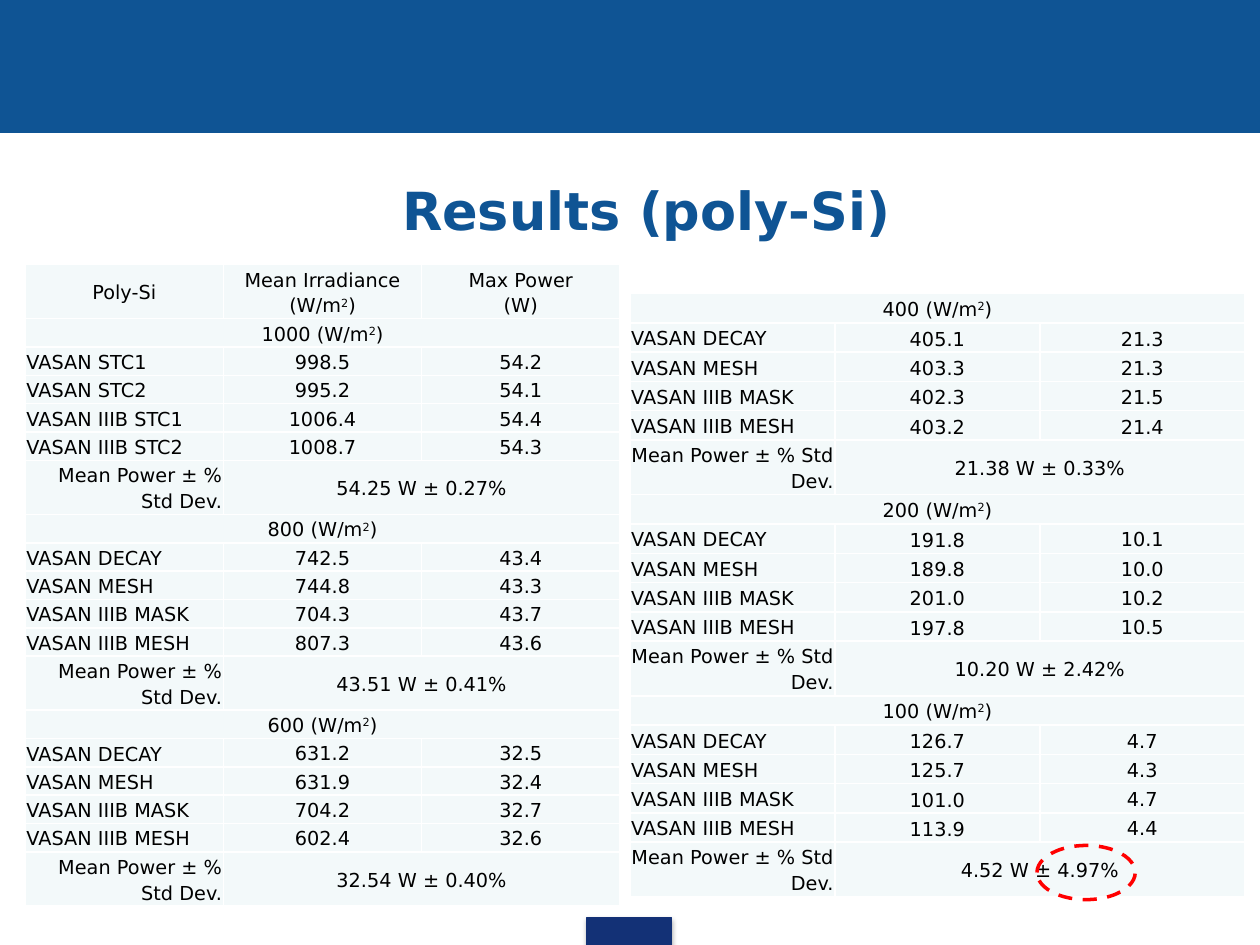
import pptx
import pptx.dml.color
import pptx.enum.dml
import pptx.enum.shapes
import pptx.enum.text
import pptx.oxml
import pptx.util

RGB = pptx.dml.color.RGBColor
BLUE = RGB(0x0F, 0x54, 0x94)
NAVY = RGB(0x13, 0x31, 0x76)
PALE = RGB(0xF3, 0xF9, 0xFA)
BLACK = RGB(0x00, 0x00, 0x00)
RED = RGB(0xFF, 0x00, 0x00)
FONT = "DejaVu Sans"
NS = 'xmlns:a="http://schemas.openxmlformats.org/drawingml/2006/main"'

Pt = pptx.util.Pt
Align = pptx.enum.text.PP_ALIGN
Anchor = pptx.enum.text.MSO_ANCHOR
Kind = pptx.enum.shapes.MSO_SHAPE
TOP, MID, LOW = Anchor.TOP, Anchor.MIDDLE, Anchor.BOTTOM

WIDTH = pptx.util.Inches(10)
HEIGHT = pptx.util.Inches(7.5)

BRAND = "VASAN"
SHORT = ["DECAY", "MESH", "IIIB MASK", "IIIB MESH"]
FIRST = ["STC1", "STC2", "IIIB STC1", "IIIB STC2"]
HEAD = ["Poly-Si", "Mean Irradiance\n(W/m^2^)", "Max Power\n(W)"]

LEFT = [
    (1000, FIRST, [998.5, 995.2, 1006.4, 1008.7],
     [54.2, 54.1, 54.4, 54.3], "54.25 W ± 0.27%", (MID, TOP)),
    (800, SHORT, [742.5, 744.8, 704.3, 807.3],
     [43.4, 43.3, 43.7, 43.6], "43.51 W ± 0.41%", (TOP, TOP)),
    (600, SHORT, [631.2, 631.9, 704.2, 602.4],
     [32.5, 32.4, 32.7, 32.6], "32.54 W ± 0.40%", (TOP, TOP)),
]
RIGHT = [
    (400, SHORT, [405.1, 403.3, 402.3, 403.2],
     [21.3, 21.3, 21.5, 21.4], "21.38 W ± 0.33%", (LOW, LOW)),
    (200, SHORT, [191.8, 189.8, 201.0, 197.8],
     [10.1, 10.0, 10.2, 10.5], "10.20 W ± 2.42%", (LOW, MID)),
    (100, SHORT, [126.7, 125.7, 101.0, 113.9],
     [4.7, 4.3, 4.7, 4.4], "4.52 W ± 4.97%", (LOW, MID)),
]


def area(left, top, width, height):
    return (int(WIDTH * left / 100), int(HEIGHT * top / 100),
            int(WIDTH * width / 100), int(HEIGHT * height / 100))


def write(frame, text, size=11, color=BLACK, bold=False,
          align=Align.CENTER, space=1.15):
    frame.word_wrap = True
    for row, line in enumerate(text.split("\n")):
        para = frame.add_paragraph() if row else frame.paragraphs[0]
        para.alignment = align
        para.line_spacing = space
        for part, piece in enumerate(line.split("^")):
            run = para.add_run()
            run.text = piece
            run.font.name = FONT
            run.font.size = Pt(size)
            run.font.bold = bold
            run.font.color.rgb = color
            if part % 2:
                run._r.get_or_add_rPr().set("baseline", "30000")


def block(slide, box, color):
    shape = slide.shapes.add_shape(Kind.RECTANGLE, *box)
    shape.shadow.inherit = False
    shape.fill.solid()
    shape.fill.fore_color.rgb = color
    shape.line.color.rgb = color
    shape.line.width = Pt(0.75)
    return shape


def frame(slide, band, tab):
    block(slide, band, BLUE)
    foot = block(slide, tab, NAVY)
    effects = foot._element.spPr.find(pptx.oxml.ns.qn("a:effectLst"))
    effects.append(pptx.oxml.parse_xml(
        f'<a:outerShdw {NS} blurRad="{Pt(3.1)}" dist="{Pt(1.8)}" dir="5400000">'
        '<a:srgbClr val="000000"><a:alpha val="35000"/></a:srgbClr>'
        '</a:outerShdw>'))


def title(slide, box):
    head = slide.shapes.title
    head.left, head.top, head.width, head.height = box
    text = head.text_frame
    text.auto_size = pptx.enum.text.MSO_AUTO_SIZE.NONE
    text.vertical_anchor = MID
    write(text, "Results (poly-Si)", size=30, color=BLUE, bold=True, space=1.0)
    props = text.paragraphs[0]._p.get_or_add_pPr()
    props.set("marL", str(int(WIDTH * 0.04)))
    props.set("indent", "0")


def paint(cell):
    props = cell._tc.get_or_add_tcPr()
    for side in ("lnL", "lnR", "lnT", "lnB"):
        props.append(pptx.oxml.parse_xml(
            f'<a:{side} {NS} w="{Pt(1)}"><a:solidFill>'
            f'<a:srgbClr val="FFFFFF"/></a:solidFill></a:{side}>'))
    cell.fill.solid()
    cell.fill.fore_color.rgb = PALE
    cell.margin_left = cell.margin_right = pptx.util.Inches(0.01)
    cell.margin_top = cell.margin_bottom = pptx.util.Inches(0.01)


def put(cell, text, anchor=MID, align=Align.CENTER):
    cell.vertical_anchor = anchor
    write(cell.text_frame, text, align=align)


def grid(slide, box, groups, small, tall, head=None):
    start = 1 if head else 0
    count = start + sum(len(group[1]) + 2 for group in groups)
    table = slide.shapes.add_table(count, 3, *box).table
    table.first_row = table.horz_banding = False
    for col in table.columns:
        col.width = box[2] // 3
    for row in table.rows:
        row.height = int(HEIGHT * small / 100)
    for cell in table.iter_cells():
        paint(cell)
    if head:
        table.rows[0].height = int(HEIGHT * tall / 100)
        for col, text in enumerate(head):
            put(table.cell(0, col), text)
    row = start
    for level, names, light, power, mean, (mid, end) in groups:
        table.cell(row, 0).merge(table.cell(row, 2))
        put(table.cell(row, 0), f"{level} (W/m^2^)")
        for name, sun, watt in zip(names, light, power):
            row += 1
            put(table.cell(row, 0), f"{BRAND} {name}", align=Align.LEFT)
            put(table.cell(row, 1), f"{sun:.1f}", anchor=mid)
            put(table.cell(row, 2), f"{watt:.1f}", anchor=end)
        row += 1
        table.rows[row].height = int(HEIGHT * tall / 100)
        table.cell(row, 1).merge(table.cell(row, 2))
        put(table.cell(row, 0), "Mean Power ± % Std Dev.", align=Align.RIGHT)
        put(table.cell(row, 1), mean)
        row += 1


def ring(slide, box):
    shape = slide.shapes.add_shape(Kind.OVAL, *box)
    shape.shadow.inherit = False
    shape.fill.background()
    shape.line.color.rgb = RED
    shape.line.width = Pt(2)
    shape.line.dash_style = pptx.enum.dml.MSO_LINE.DASH


def main():
    deck = pptx.Presentation()
    deck.slide_width, deck.slide_height = WIDTH, HEIGHT
    slide = deck.slides.add_slide(deck.slide_layouts[5])
    frame(slide, area(0, 0, 100, 14), area(46.6, 97.07, 6.7, 2.93))
    title(slide, area(4.3, 15.33, 90, 13.6))
    grid(slide, area(2, 28, 47.2, 71.33), LEFT, 2.93, 5.73, head=HEAD)
    grid(slide, area(50, 31.07, 48.8, 65.33), RIGHT, 3.1, 5.8)
    ring(slide, area(82.3, 89.47, 7.8, 5.73))
    deck.save("out.pptx")


if __name__ == "__main__":
    main()
